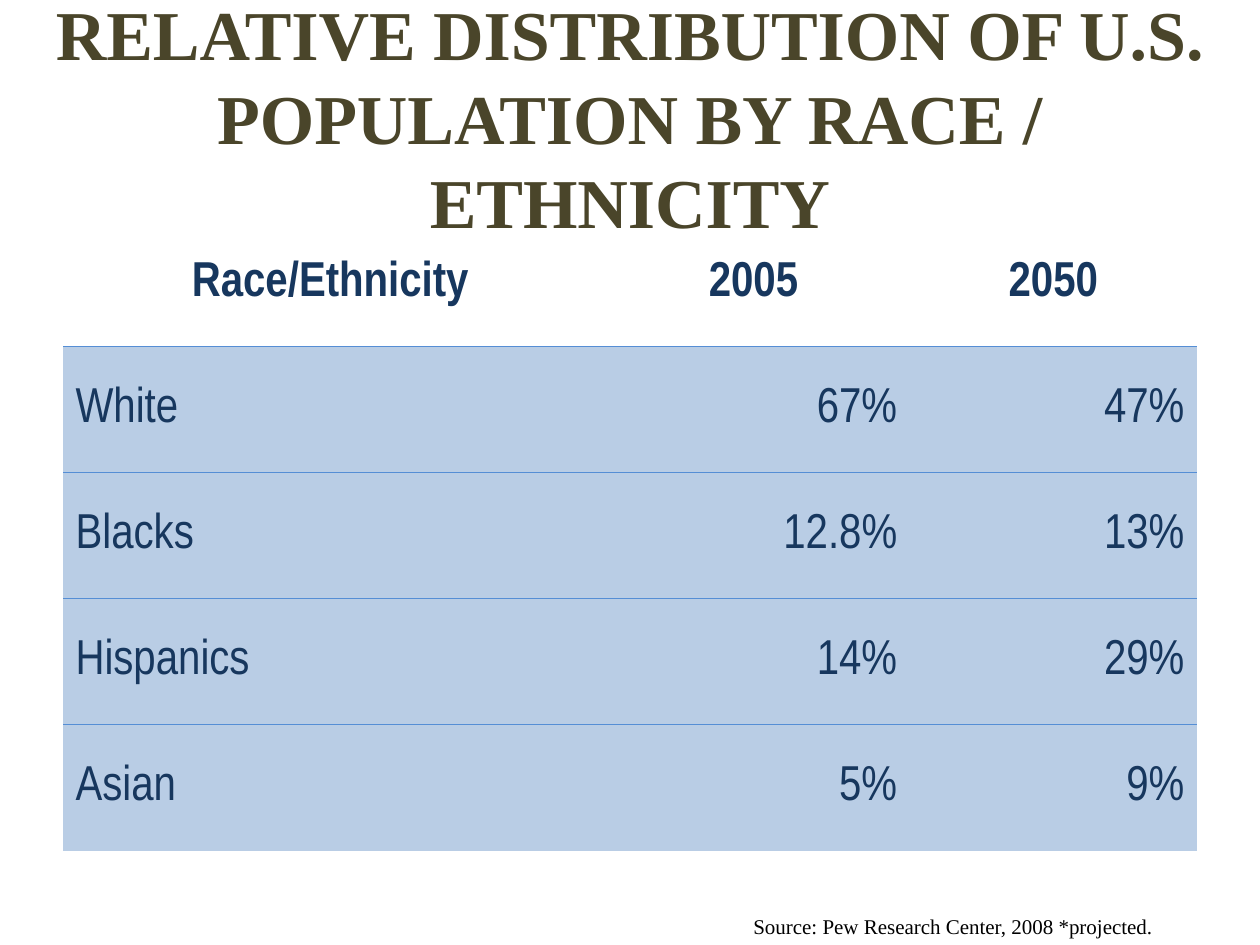
from lxml.etree import SubElement
from pptx import Presentation
from pptx.dml.color import RGBColor
from pptx.enum.text import MSO_ANCHOR, PP_ALIGN
from pptx.oxml.ns import qn
from pptx.util import Inches, Pt

TITLE = {"name": "Times New Roman", "size": Pt(40), "bold": True}
BODY = {"name": "Arial Narrow", "size": Pt(28), "bold": False}
HEADER = {**BODY, "bold": True}
SOURCE = {"name": "Times New Roman", "size": Pt(12), "bold": False}
ROWS = [
    ("Race/Ethnicity", "2005", "2050"),
    ("White", "67%", "47%"),
    ("Blacks", "12.8%", "13%"),
    ("Hispanics", "14%", "29%"),
    ("Asian", "5%", "9%"),
]


def color(value):
    return RGBColor.from_string(value)


class SlideBuilder:
    """Holds the colours and current slide, and adds each kind of element."""

    title_color = "4A452A"
    table_color = "17375E"
    source_color = "000000"
    row_fill = "B9CDE5"
    border_color = "558ED5"
    plain_table_style = "{2D5ABB26-0587-4C30-8999-92F81FD0307C}"

    def __init__(self, slide):
        self.slide = slide

    def add_run(self, frame, text, font_format, font_color, alignment):
        paragraph = frame.paragraphs[0]
        paragraph.alignment = alignment
        run = paragraph.add_run()
        run.text = text
        for name, value in font_format.items():
            setattr(run.font, name, value)
        run.font.color.rgb = color(font_color)

    def text(self, box, text, font_format, font_color, alignment, anchor):
        shape = self.slide.shapes.add_textbox(*map(Inches, box))
        frame = shape.text_frame
        frame.word_wrap = True
        frame.vertical_anchor = anchor
        self.add_run(frame, text, font_format, font_color, alignment)

    def border(self, cell, side):
        line = SubElement(cell._tc.get_or_add_tcPr(), qn(f"a:{side}"), w=str(Pt(1)))
        fill = SubElement(line, qn("a:solidFill"))
        SubElement(fill, qn("a:srgbClr"), val=self.border_color)

    def table(self, box, rows, widths):
        frame = self.slide.shapes.add_table(len(rows), len(widths), *map(Inches, box))
        table = frame.table
        table._tbl.tblPr.find(qn("a:tableStyleId")).text = self.plain_table_style
        table.horz_banding = False
        for column, width in zip(table.columns, widths):
            column.width = Inches(width)
        for row_index, values in enumerate(rows):
            for column_index, value in enumerate(values):
                cell = table.cell(row_index, column_index)
                self.cell(cell, value, row_index, column_index, len(rows) - 1)

    def cell(self, cell, value, row_index, column_index, last_row):
        cell.vertical_anchor = MSO_ANCHOR.MIDDLE
        if row_index > 0:
            self.border(cell, "lnT")
        if row_index < last_row:
            self.border(cell, "lnB")
        if row_index == 0:
            cell.fill.background()
            font_format, alignment = HEADER, PP_ALIGN.CENTER
        else:
            cell.fill.solid()
            cell.fill.fore_color.rgb = color(self.row_fill)
            font_format = BODY
            alignment = PP_ALIGN.RIGHT if column_index else PP_ALIGN.LEFT
        self.add_run(cell.text_frame, value, font_format, self.table_color, alignment)


def main():
    presentation = Presentation()
    presentation.slide_width = Inches(10)
    presentation.slide_height = Inches(7.5)
    slide = presentation.slides.add_slide(presentation.slide_layouts[6])
    builder = SlideBuilder(slide)
    builder.text(
        (0.05, 0.3, 9.9, 1.25),
        "RELATIVE DISTRIBUTION OF U.S. POPULATION BY RACE / ETHNICITY",
        TITLE, builder.title_color, PP_ALIGN.CENTER, MSO_ANCHOR.MIDDLE,
    )
    builder.table((0.5, 1.75, 9, 5), ROWS, (4.24, 2.48, 2.28))
    builder.text(
        (5.25, 7.2, 4, 0.3),
        "Source: Pew Research Center, 2008 *projected.",
        SOURCE, builder.source_color, PP_ALIGN.RIGHT, MSO_ANCHOR.TOP,
    )
    presentation.save("out.pptx")


if __name__ == "__main__":
    main()
